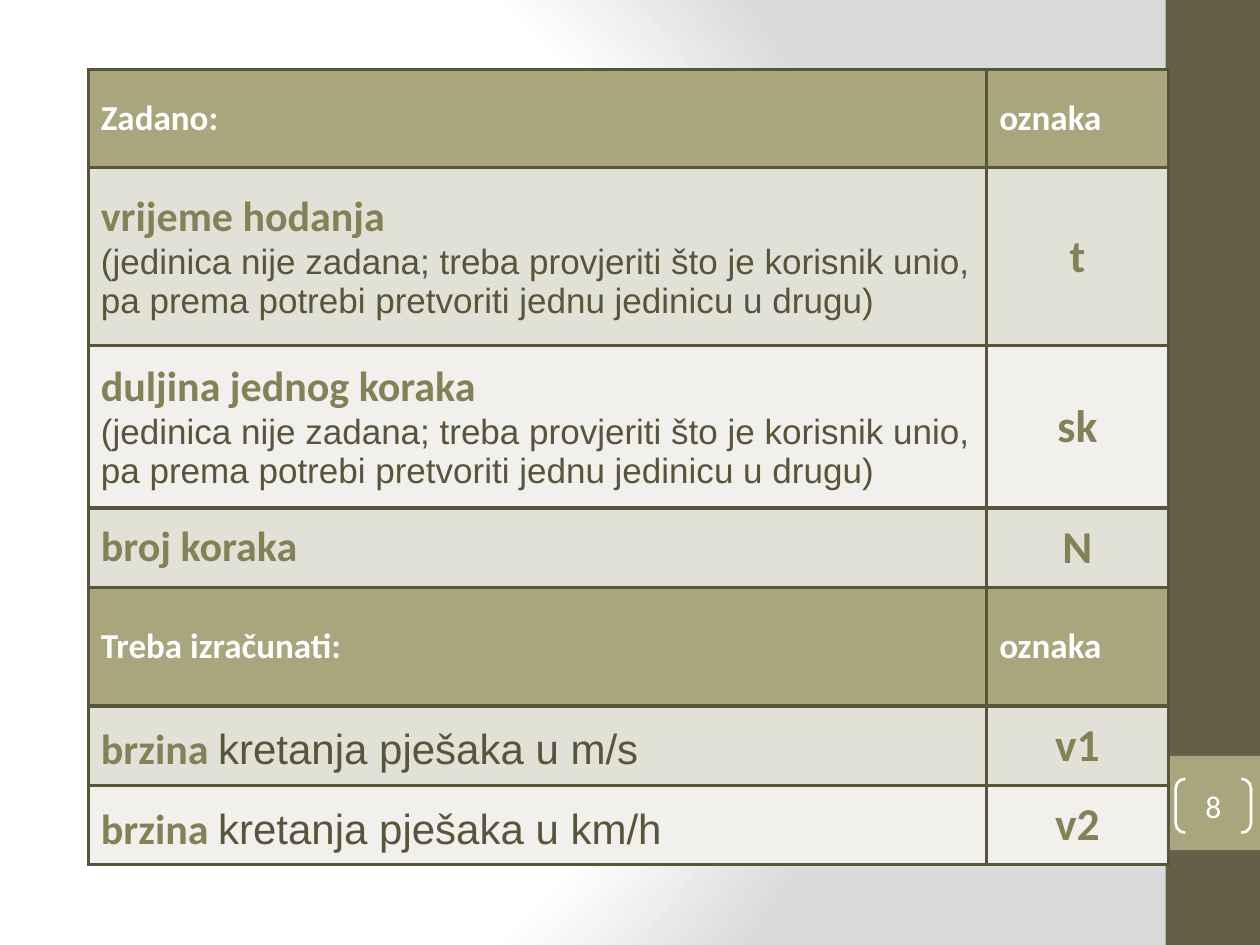
from lxml import etree
from pptx import Presentation
from pptx.dml.color import RGBColor
from pptx.enum.shapes import MSO_SHAPE
from pptx.enum.text import MSO_ANCHOR, PP_ALIGN
from pptx.oxml.ns import qn
from pptx.util import Cm, Pt

RECTANGLE = MSO_SHAPE.RECTANGLE
BRACKETS = MSO_SHAPE.DOUBLE_BRACKET
MIDDLE = MSO_ANCHOR.MIDDLE
LEFT, CENTER = PP_ALIGN.LEFT, PP_ALIGN.CENTER

WHITE, GRAY = "FFFFFF", "DADADA"
BROWN, OLIVE, DARK_OLIVE, KHAKI = "675E47", "858157", "58563A", "A9A57C"
BAND_DARK, BAND_LIGHT = "E2E1D7", "F1F0EC"

COLUMN_WIDTHS = [18.11, 3.66]
UNIT_NOTE = ("(jedinica nije zadana; treba provjeriti što je korisnik unio, "
             "pa prema potrebi pretvoriti jednu jedinicu u drugu)")
# Kind, row height, fill, term, explanation, symbol
ROWS = [
    ("header", 1.98, KHAKI, "Zadano:", "", "oznaka"),
    ("note", 3.58, BAND_DARK, "vrijeme hodanja ", UNIT_NOTE, "t"),
    ("note", 3.28, BAND_LIGHT, "duljina jednog koraka ", UNIT_NOTE, "sk"),
    ("plain", 1.6, BAND_DARK, "broj koraka", "", "N"),
    ("header", 2.39, KHAKI, "Treba izračunati:", "", "oznaka"),
    ("result", 1.6, BAND_DARK, "brzina ", "kretanja pješaka u m/s", "v1"),
    ("result", 1.6, BAND_LIGHT, "brzina ", "kretanja pješaka u km/h", "v2"),
]


def color(value):
    return RGBColor.from_string(value)


def add_text(paragraph, text, size=24, fill=OLIVE, font="Calibri", bold=True):
    run = paragraph.add_run()
    run.text = text
    run.font.size = Pt(size)
    run.font.name = font
    run.font.bold = bold
    run.font.color.rgb = color(fill)


def set_background(slide):
    """Circular gradient from white to gray."""
    slide.background.fill.gradient()
    gradient = slide.element.find(".//" + qn("a:gradFill"))
    for child in list(gradient):
        gradient.remove(child)
    stops = etree.SubElement(gradient, qn("a:gsLst"))
    for position, value in ((0, WHITE), (75, WHITE), (100, GRAY)):
        stop = etree.SubElement(stops, qn("a:gs"), pos=str(position * 1000))
        etree.SubElement(stop, qn("a:srgbClr"), val=value)
    circle = etree.SubElement(gradient, qn("a:path"), path="circle")
    etree.SubElement(circle, qn("a:fillToRect"),
                     l="20000", t="50000", r="100000", b="50000")


def add_shape(slide, kind, left, top, width, height, fill=None, line=None):
    shape = slide.shapes.add_shape(kind, Cm(left), Cm(top), Cm(width), Cm(height))
    shape.shadow.inherit = False
    if fill:
        shape.fill.solid()
        shape.fill.fore_color.rgb = color(fill)
    else:
        shape.fill.background()
    if line:
        shape.line.color.rgb = color(line)
        shape.line.width = Pt(1.5)
    else:
        shape.line.fill.background()
    return shape


def style_cell(cell, fill):
    cell.vertical_anchor = MIDDLE
    properties = cell._tc.get_or_add_tcPr()
    for side in ("lnL", "lnR", "lnT", "lnB"):
        border = etree.SubElement(properties, qn("a:" + side), w=str(Pt(2.25)))
        solid = etree.SubElement(border, qn("a:solidFill"))
        etree.SubElement(solid, qn("a:srgbClr"), val=DARK_OLIVE)
    cell.fill.solid()
    cell.fill.fore_color.rgb = color(fill)


def start_paragraph(cell, alignment=LEFT, hanging=True):
    paragraph = cell.text_frame.paragraphs[0]
    paragraph.alignment = alignment
    if hanging:
        properties = paragraph._p.get_or_add_pPr()
        properties.set("marL", str(Cm(1.22)))
        properties.set("indent", str(Cm(-1.22)))
    return paragraph


def fill_term(cell, kind, term, explanation):
    paragraph = start_paragraph(cell, hanging=kind != "note")
    if kind == "header":
        add_text(paragraph, term, size=20, fill=WHITE)
        return
    if kind == "result":
        paragraph.line_spacing = 1.2
        after = etree.SubElement(paragraph._p.get_or_add_pPr(), qn("a:spcAft"))
        etree.SubElement(after, qn("a:spcPct"), val="40000")
    add_text(paragraph, term)
    if kind == "note":
        paragraph.add_line_break()
    if explanation:
        add_text(paragraph, explanation, size=20 if kind == "note" else 24,
                 fill=DARK_OLIVE, font="Arial", bold=False)


def fill_symbol(cell, kind, symbol):
    if kind == "header":
        add_text(start_paragraph(cell), symbol, size=20, fill=WHITE)
    else:
        add_text(start_paragraph(cell, CENTER), symbol, size=26)


def add_variable_table(slide):
    heights = [row[1] for row in ROWS]
    table = slide.shapes.add_table(
        len(ROWS), len(COLUMN_WIDTHS), Cm(1.78), Cm(1.4),
        Cm(sum(COLUMN_WIDTHS)), Cm(sum(heights))).table
    for column, width in zip(table.columns, COLUMN_WIDTHS):
        column.width = Cm(width)
    for row, (kind, height, fill, term, explanation, symbol) in zip(table.rows, ROWS):
        row.height = Cm(height)
        for cell in row.cells:
            style_cell(cell, fill)
        fill_term(row.cells[0], kind, term, explanation)
        fill_symbol(row.cells[1], kind, symbol)


def add_page_number(slide, number):
    brackets = add_shape(slide, BRACKETS, 23.7, 15.7, 1.52, 1.09, line=WHITE)
    brackets.adjustments[0] = 0.18
    frame = brackets.text_frame
    frame.vertical_anchor = MIDDLE
    frame.margin_left = frame.margin_right = 0
    frame.margin_top = frame.margin_bottom = 0
    paragraph = frame.paragraphs[0]
    paragraph.alignment = CENTER
    add_text(paragraph, number, size=18, fill=WHITE, bold=False)


def main():
    presentation = Presentation()
    presentation.slide_width, presentation.slide_height = Cm(25.4), Cm(19.05)
    slide = presentation.slides.add_slide(presentation.slide_layouts[6])

    # Background and side bar
    set_background(slide)
    add_shape(slide, RECTANGLE, 23.5, 0, 1.9, 19.05, fill=BROWN)
    add_shape(slide, RECTANGLE, 23.5, 15.24, 1.9, 1.9, fill=KHAKI)

    # Content
    add_variable_table(slide)
    add_page_number(slide, "8")
    presentation.save("out.pptx")


if __name__ == "__main__":
    main()
